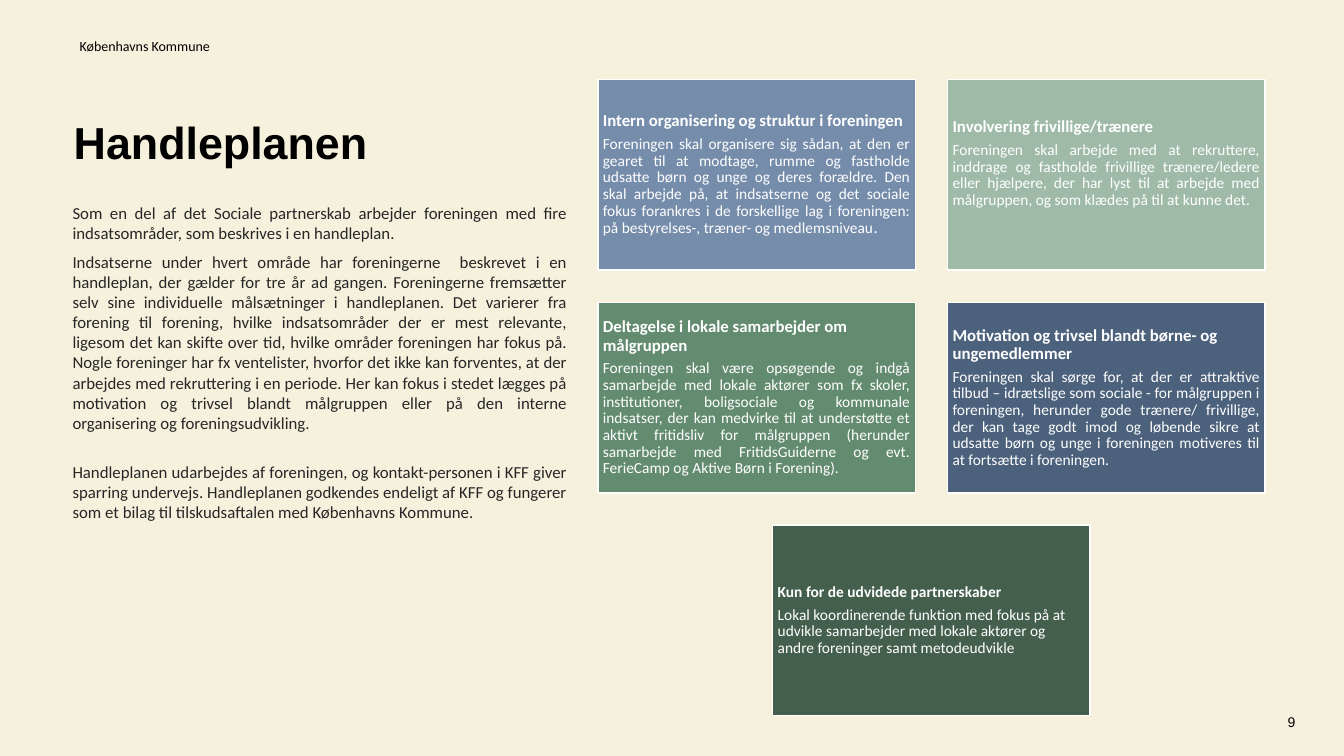
import pptx
import pptx.util
import pptx.dml.color
import pptx.enum.shapes
import pptx.enum.text

Pt = pptx.util.Pt
RGBColor = pptx.dml.color.RGBColor
Align = pptx.enum.text.PP_ALIGN
Anchor = pptx.enum.text.MSO_ANCHOR

CREAM = RGBColor(0xF6, 0xF1, 0xDD)
BLACK = RGBColor(0x00, 0x00, 0x00)
CHARCOAL = RGBColor(0x26, 0x26, 0x26)
WHITE = RGBColor(0xFF, 0xFF, 0xFF)
BLUE = RGBColor(0x75, 0x8C, 0xAB)
SAGE = RGBColor(0x9F, 0xBB, 0xA8)
GREEN = RGBColor(0x63, 0x8B, 0x6F)
NAVY = RGBColor(0x4C, 0x61, 0x7C)
FOREST = RGBColor(0x44, 0x60, 0x4D)

CARD_WIDTH, CARD_HEIGHT = 226.8, 136.1
GRID_LEFT, GRID_TOP = 427, 56.9
COLUMN_STEP, ROW_STEP = 249.8, 159.1

INTRO = [
    "Som en del af det Sociale partnerskab arbejder foreningen med fire indsatsområder, som beskrives i en handleplan.",
    "Indsatserne under hvert område har foreningerne  beskrevet i en handleplan, der gælder for tre år ad gangen. "
    "Foreningerne fremsætter selv sine individuelle målsætninger i handleplanen. Det varierer fra forening til forening, "
    "hvilke indsatsområder der er mest relevante, ligesom det kan skifte over tid, hvilke områder foreningen har fokus på. "
    "Nogle foreninger har fx ventelister, hvorfor det ikke kan forventes, at der arbejdes med rekruttering i en periode. "
    "Her kan fokus i stedet lægges på motivation og trivsel blandt målgruppen eller på den interne organisering og "
    "foreningsudvikling.",
    "Handleplanen udarbejdes af foreningen, og kontakt-personen i KFF giver sparring undervejs. Handleplanen godkendes "
    "endeligt af KFF og fungerer som et bilag til tilskudsaftalen med Københavns Kommune.",
]

FOCUS_AREAS = [
    (0, 0, BLUE, "Intern organisering og struktur i foreningen",
     "Foreningen skal organisere sig sådan, at den er gearet til at modtage, rumme og fastholde udsatte børn og unge og "
     "deres forældre. Den skal arbejde på, at indsatserne og det sociale fokus forankres i de forskellige lag i "
     "foreningen: på bestyrelses-, træner- og medlemsniveau."),
    (1, 0, SAGE, "Involvering frivillige/trænere",
     "Foreningen skal arbejde med at rekruttere, inddrage og fastholde frivillige trænere/ledere eller hjælpere, der har "
     "lyst til at arbejde med målgruppen, og som klædes på til at kunne det."),
    (0, 1, GREEN, "Deltagelse i lokale samarbejder om målgruppen",
     "Foreningen skal være opsøgende og indgå samarbejde med lokale aktører som fx skoler, institutioner, boligsociale og "
     "kommunale indsatser, der kan medvirke til at understøtte et aktivt fritidsliv for målgruppen (herunder samarbejde "
     "med FritidsGuiderne og evt. FerieCamp og Aktive Børn i Forening)."),
    (1, 1, NAVY, "Motivation og trivsel blandt børne- og ungemedlemmer",
     "Foreningen skal sørge for, at der er attraktive tilbud – idrætslige som sociale - for målgruppen i foreningen, "
     "herunder gode trænere/ frivillige, der kan tage godt imod og løbende sikre at udsatte børn og unge i foreningen "
     "motiveres til at fortsætte i foreningen."),
]


def set_insets(frame, inset):
    frame.margin_left = frame.margin_right = Pt(inset)
    frame.margin_top = frame.margin_bottom = Pt(inset)
    frame.word_wrap = True


def write(paragraph, text, size, color, bold=False, align=Align.LEFT, font="Calibri"):
    paragraph.text = text
    paragraph.alignment = align
    paragraph.font.name = font
    paragraph.font.size = Pt(size)
    paragraph.font.bold = bold
    paragraph.font.color.rgb = color


def add_text(slide, left, top, width, height, anchor):
    frame = slide.shapes.add_textbox(Pt(left), Pt(top), Pt(width), Pt(height)).text_frame
    set_insets(frame, 0)
    frame.vertical_anchor = anchor
    return frame


def set_title(slide, text):
    title = slide.shapes.title
    title.left, title.top, title.width, title.height = Pt(45.4), Pt(77.8), Pt(324), Pt(46)
    title.text_frame.vertical_anchor = Anchor.MIDDLE
    title.text_frame.auto_size = pptx.enum.text.MSO_AUTO_SIZE.NONE
    write(title.text_frame.paragraphs[0], text, 32, BLACK, bold=True, font="Arial")


def add_intro(slide):
    frame = add_text(slide, 51.8, 144.7, 353.5, 386.6, Anchor.TOP)
    for index, text in enumerate(INTRO):
        paragraph = frame.add_paragraph() if index else frame.paragraphs[0]
        write(paragraph, text, 12, CHARCOAL, align=Align.JUSTIFY)
        paragraph.space_after = Pt(6)
    paragraph.space_before = Pt(14.6)


def add_card(slide, column, row, fill, heading, body, heading_size=12, align=Align.JUSTIFY):
    card = slide.shapes.add_shape(
        pptx.enum.shapes.MSO_SHAPE.RECTANGLE,
        Pt(GRID_LEFT + column * COLUMN_STEP), Pt(GRID_TOP + row * ROW_STEP),
        Pt(CARD_WIDTH), Pt(CARD_HEIGHT))
    card.shadow.inherit = False
    card.fill.solid()
    card.fill.fore_color.rgb = fill
    card.line.color.rgb = WHITE
    card.line.width = Pt(1)
    frame = card.text_frame
    set_insets(frame, 3.6)
    frame.vertical_anchor = Anchor.MIDDLE
    write(frame.paragraphs[0], heading, heading_size, WHITE, bold=True)
    write(frame.add_paragraph(), body, 11, WHITE, align=align)
    for paragraph in frame.paragraphs:
        paragraph.line_spacing = 0.9
        paragraph.space_after = Pt(4.2)
    return frame


def main():
    deck = pptx.Presentation()
    deck.slide_width, deck.slide_height = Pt(960), Pt(540)
    slide = deck.slides.add_slide(deck.slide_layouts[5])
    slide.background.fill.solid()
    slide.background.fill.fore_color.rgb = CREAM

    sender = add_text(slide, 56.9, 24.5, 277.2, 14.4, Anchor.BOTTOM)
    write(sender.paragraphs[0], "Københavns Kommune", 10, BLACK)
    set_title(slide, "Handleplanen")
    add_intro(slide)

    organisation, volunteers, *_ = [add_card(slide, *area) for area in FOCUS_AREAS]
    closing = organisation.paragraphs[1]
    closing.runs[0].text = closing.text.removesuffix(".")
    full_stop = closing.add_run()
    full_stop.text = "."
    full_stop.font.size = Pt(12)
    volunteers.margin_bottom = Pt(20)
    add_card(slide, 0.5, 2, FOREST, "Kun for de udvidede partnerskaber",
             "Lokal koordinerende funktion med fokus på at udvikle samarbejder med lokale aktører og andre foreninger "
             "samt metodeudvikle", heading_size=11, align=Align.LEFT)

    page_number = add_text(slide, 903.6, 500.4, 21.6, 21.6, Anchor.BOTTOM)
    write(page_number.paragraphs[0], "9", 10, BLACK, align=Align.RIGHT, font="Arial")
    deck.save("out.pptx")


if __name__ == "__main__":
    main()
